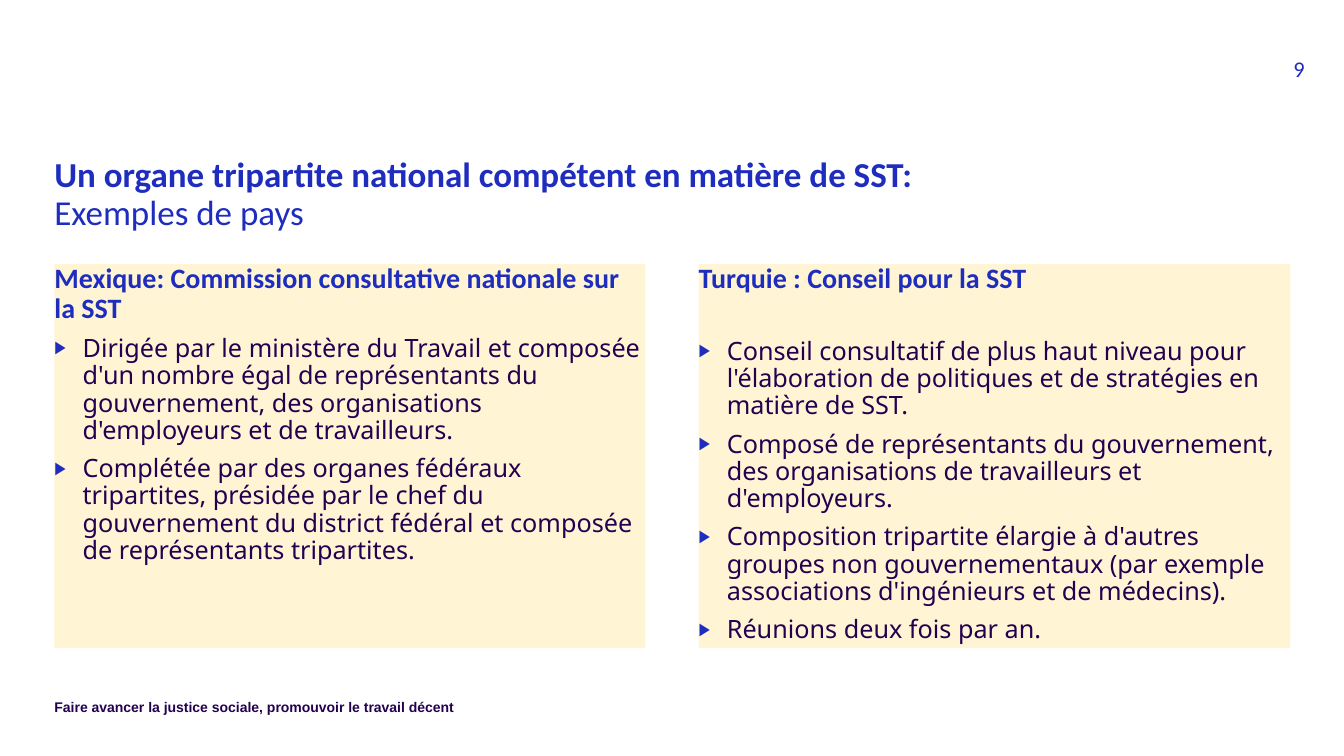
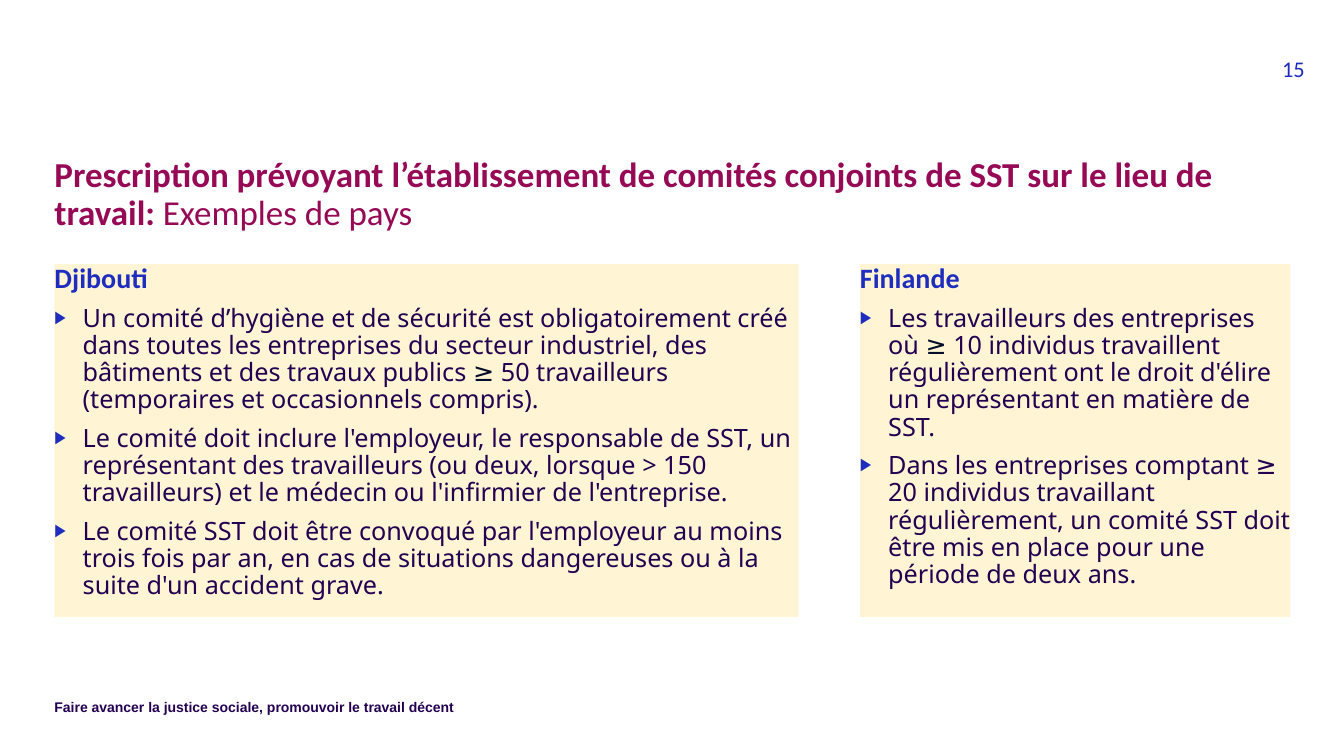
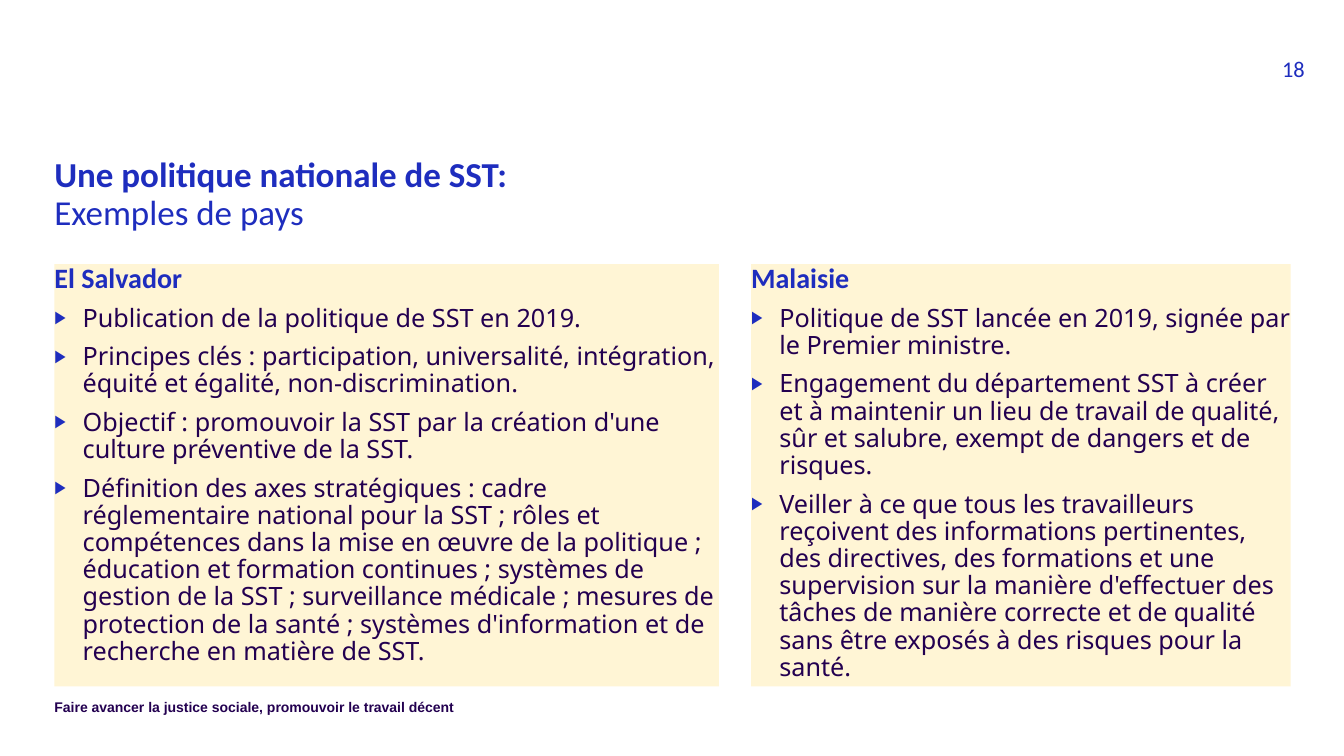
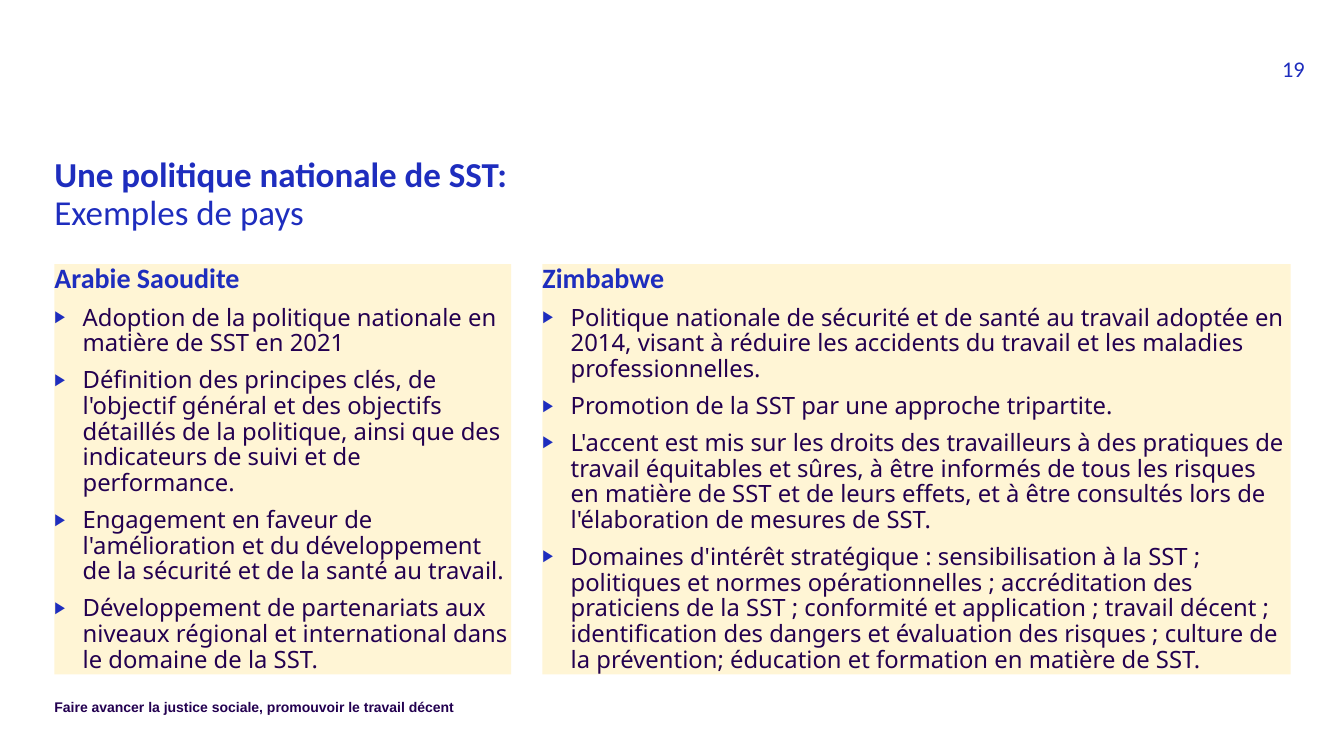
from dataclasses import dataclass

from lxml.etree import SubElement
from pptx import Presentation
from pptx.dml.color import RGBColor
from pptx.enum.shapes import MSO_SHAPE
from pptx.enum.text import MSO_ANCHOR, PP_ALIGN
from pptx.oxml.ns import qn
from pptx.util import Inches, Pt


@dataclass(frozen=True)
class Theme:
    blue: str = "1E2DBE"
    plum: str = "960A55"
    ink: str = "230050"
    symbol_ink: str = "040C28"
    cream: str = "FFF5D5"
    heading_font: str = "Calibri"
    body_font: str = "Noto Sans"
    symbol_font: str = "Cabin"
    footer_font: str = "Arial"
    title_size: int = 25
    heading_size: int = 20
    number_size: int = 16
    footer_size: int = 10
    line_spacing: float = 0.9
    paragraph_gap: int = 4
    indent: float = 0.28


@dataclass(frozen=True)
class Panel:
    heading: str
    bullets: tuple
    heading_gap: float = Theme.paragraph_gap


@dataclass(frozen=True)
class Content:
    number: int
    title: str
    panels: tuple
    left_width: float
    gap: float
    height: float
    title_color: str = Theme.blue
    body_size: int = 18


THEME = Theme()
MARGIN = 0.54
CONTENT_WIDTH = 12.26
PANEL_TOP = 2.62
SUBTITLE = "Exemples de pays"
FOOTER = "Faire avancer la justice sociale, promouvoir le travail décent"
SYMBOL = "≥"
POLICY_TITLE = "Une politique nationale de SST:\v"


def style(span, font, size, color, bold=False):
    span.font.name = font
    span.font.size = Pt(size)
    span.font.bold = bold
    span.font.color.rgb = RGBColor.from_string(color)


def add_span(para, text, *look):
    span = para.add_run()
    span.text = text
    style(span, *look)


def prepare_frame(shape):
    frame = shape.text_frame
    frame.word_wrap = True
    frame.vertical_anchor = MSO_ANCHOR.TOP
    frame.margin_left = frame.margin_right = 0
    frame.margin_top = frame.margin_bottom = 0
    return frame


def add_text(page, box, text, *look, align=PP_ALIGN.LEFT):
    shape = page.shapes.add_textbox(*map(Inches, box))
    para = prepare_frame(shape).paragraphs[0]
    para.text = text
    para.alignment = align
    for span in para.runs:
        style(span, *look)
    return para


def add_title(page, box, text, color):
    para = add_text(page, box, text, THEME.heading_font, THEME.title_size, color, True)
    para.line_spacing = THEME.line_spacing
    add_span(para, SUBTITLE, THEME.heading_font, THEME.title_size, color)


def add_bullet(frame, spans, size):
    para = frame.add_paragraph()
    properties = para._p.get_or_add_pPr()
    properties.set("marL", str(Inches(THEME.indent)))
    properties.set("indent", str(-Inches(THEME.indent)))
    color = SubElement(properties, qn("a:buClr"))
    SubElement(color, qn("a:srgbClr"), val=THEME.blue)
    SubElement(properties, qn("a:buSzPct"), val="70000")
    SubElement(properties, qn("a:buFont"), typeface="Arial")
    SubElement(properties, qn("a:buChar"), char="▶")
    para.level = 1
    para.alignment = PP_ALIGN.LEFT
    para.line_spacing = THEME.line_spacing
    para.space_before = para.space_after = Pt(THEME.paragraph_gap)
    for text in spans:
        if text == SYMBOL:
            add_span(para, text, THEME.symbol_font, size, THEME.symbol_ink)
        else:
            add_span(para, text, THEME.body_font, size, THEME.ink)


def add_panel(page, box, panel, size):
    shape = page.shapes.add_shape(MSO_SHAPE.RECTANGLE, *map(Inches, box))
    shape.shadow.inherit = False
    shape.fill.solid()
    shape.fill.fore_color.rgb = RGBColor.from_string(THEME.cream)
    shape.line.fill.background()
    frame = prepare_frame(shape)
    heading = frame.paragraphs[0]
    heading.text = panel.heading
    heading.alignment = PP_ALIGN.LEFT
    heading.line_spacing = THEME.line_spacing
    heading.space_after = Pt(panel.heading_gap)
    style(heading.runs[0], THEME.heading_font, THEME.heading_size, THEME.blue, True)
    for bullet in panel.bullets:
        spans = (bullet,) if isinstance(bullet, str) else bullet
        add_bullet(frame, spans, size)


def add_page(deck, content):
    page = deck.slides.add_slide(deck.slide_layouts[6])
    add_title(page, (MARGIN, 1.56, CONTENT_WIDTH, 0.79), content.title, content.title_color)
    offset = content.left_width + content.gap
    columns = ((0, content.left_width), (offset, CONTENT_WIDTH - offset))
    for panel, (left, width) in zip(content.panels, columns):
        box = (MARGIN + left, PANEL_TOP, width, content.height)
        add_panel(page, box, panel, content.body_size)
    add_text(page, (MARGIN, 6.93, 6.13, 0.2), FOOTER,
             THEME.footer_font, THEME.footer_size, THEME.ink, True)
    add_text(page, (12.35, 0.55, 0.59, 0.31), str(content.number),
             THEME.heading_font, THEME.number_size, THEME.blue, align=PP_ALIGN.RIGHT)


PAGES = (
    Content(
        9, "Un organe tripartite national compétent en matière de SST:\v",
        (
            Panel("Mexique: Commission consultative nationale sur la SST", (
                "Dirigée par le ministère du Travail et composée d'un nombre égal de représentants du gouvernement, des organisations d'employeurs et de travailleurs.",
                "Complétée par des organes fédéraux tripartites, présidée par le chef du gouvernement du district fédéral et composée de représentants tripartites.",
            )),
            Panel("Turquie : Conseil pour la SST", (
                "Conseil consultatif de plus haut niveau pour l'élaboration de politiques et de stratégies en matière de SST.",
                "Composé de représentants du gouvernement, des organisations de travailleurs et d'employeurs.",
                "Composition tripartite élargie à d'autres groupes non gouvernementaux (par exemple associations d'ingénieurs et de médecins).",
                "Réunions deux fois par an.",
            ), heading_gap=27.5),
        ),
        left_width=5.86, gap=0.53, height=3.81,
    ),
    Content(
        15, "Prescription prévoyant l’établissement de comités conjoints de SST sur le lieu de travail: ",
        (
            Panel("Djibouti", (
                ("Un comité d’hygiène et de sécurité est obligatoirement créé dans toutes les entreprises du secteur industriel, des bâtiments et des travaux publics ",
                 SYMBOL, " 50 travailleurs (temporaires et occasionnels compris)."),
                "Le comité doit inclure l'employeur, le responsable de SST, un représentant des travailleurs (ou deux, lorsque > 150 travailleurs) et le médecin ou l'infirmier de l'entreprise.",
                "Le comité SST doit être convoqué par l'employeur au moins trois fois par an, en cas de situations dangereuses ou à la suite d'un accident grave.",
            )),
            Panel("Finlande", (
                ("Les travailleurs des entreprises où ", SYMBOL,
                 " 10 individus travaillent régulièrement ont le droit d'élire un représentant en matière de SST."),
                "Dans les entreprises comptant ≥ 20 individus travaillant régulièrement, un comité SST doit être mis en place pour une période de deux ans.",
            )),
        ),
        left_width=7.38, gap=0.61, height=3.5, title_color=THEME.plum,
    ),
    Content(
        18, POLICY_TITLE,
        (
            Panel("El Salvador", (
                "Publication de la politique de SST en 2019.",
                "Principes clés : participation, universalité, intégration, équité et égalité, non-discrimination.",
                "Objectif : promouvoir la SST par la création d'une culture préventive de la SST.",
                "Définition des axes stratégiques : cadre réglementaire national pour la SST ; rôles et compétences dans la mise en œuvre de la politique ; éducation et formation continues ; systèmes de gestion de la SST ; surveillance médicale ; mesures de protection de la santé ; systèmes d'information et de recherche en matière de SST.",
            )),
            Panel("Malaisie", (
                "Politique de SST lancée en 2019, signée par le Premier ministre.",
                "Engagement du département SST à créer et à maintenir un lieu de travail de qualité, sûr et salubre, exempt de dangers et de risques.",
                "Veiller à ce que tous les travailleurs reçoivent des informations pertinentes, des directives, des formations et une supervision sur la manière d'effectuer des tâches de manière correcte et de qualité sans être exposés à des risques pour la santé.",
            )),
        ),
        left_width=6.59, gap=0.32, height=4.19,
    ),
    Content(
        19, POLICY_TITLE,
        (
            Panel("Arabie Saoudite", (
                "Adoption de la politique nationale en matière de SST en 2021",
                "Définition des principes clés, de l'objectif général et des objectifs détaillés de la politique, ainsi que des indicateurs de suivi et de performance.",
                "Engagement en faveur de l'amélioration et du développement de la sécurité et de la santé au travail.",
                "Développement de partenariats aux niveaux régional et international dans le domaine de la SST.",
            )),
            Panel("Zimbabwe", (
                "Politique nationale de sécurité et de santé au travail adoptée en 2014, visant à réduire les accidents du travail et les maladies professionnelles.",
                "Promotion de la SST par une approche tripartite.",
                "L'accent est mis sur les droits des travailleurs à des pratiques de travail équitables et sûres, à être informés de tous les risques en matière de SST et de leurs effets, et à être consultés lors de l'élaboration de mesures de SST.",
                "Domaines d'intérêt stratégique : sensibilisation à la SST ; politiques et normes opérationnelles ; accréditation des praticiens de la SST ; conformité et application ; travail décent ; identification des dangers et évaluation des risques ; culture de la prévention; éducation et formation en matière de SST.",
            )),
        ),
        left_width=4.53, gap=0.31, height=4.07, body_size=17,
    ),
)


def main():
    deck = Presentation()
    deck.slide_width = Inches(13.33)
    deck.slide_height = Inches(7.5)
    for content in PAGES:
        add_page(deck, content)
    deck.save("out.pptx")


if __name__ == "__main__":
    main()
